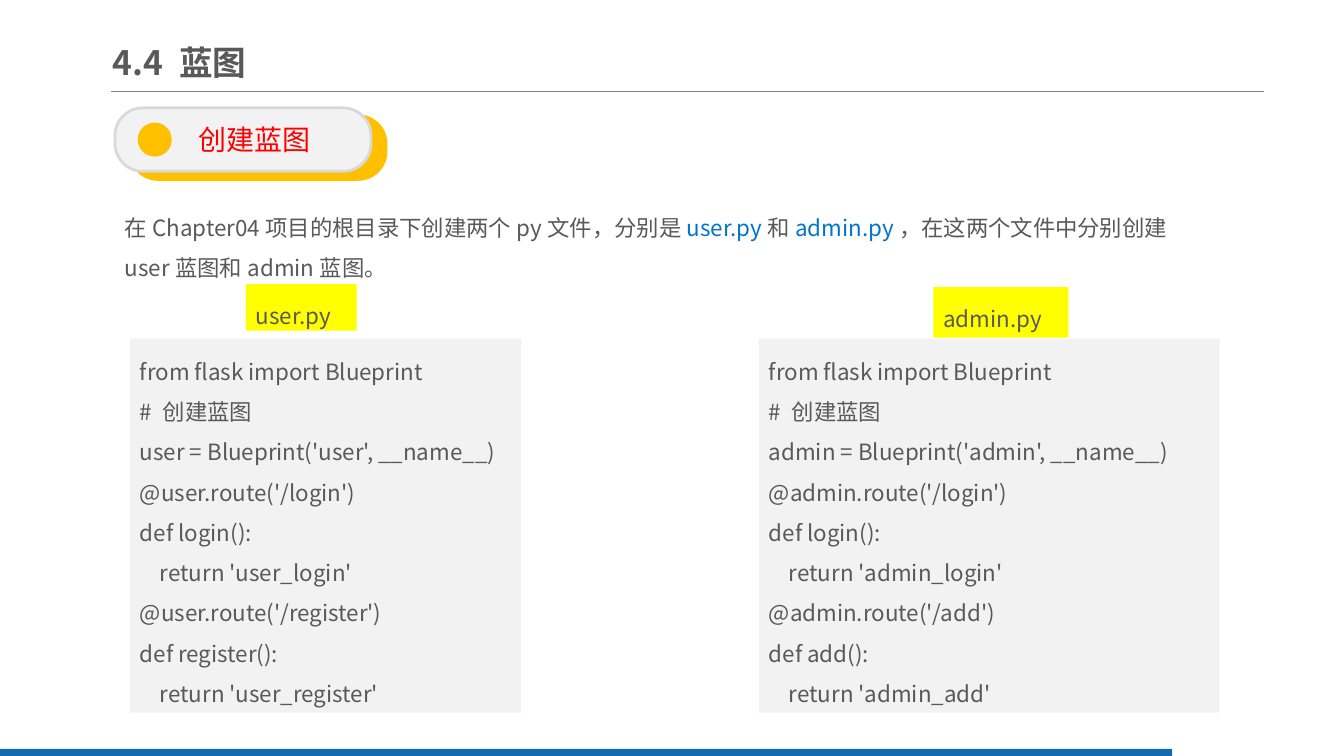
from pptx import Presentation
from pptx.dml.color import RGBColor
from pptx.enum.shapes import MSO_CONNECTOR, MSO_SHAPE as Shape
from pptx.enum.text import MSO_ANCHOR as Anchor, PP_ALIGN as Align
from pptx.oxml.ns import qn
from pptx.util import Inches, Pt
from lxml.etree import SubElement

COLORS = {
    "text": "595959", "red": "FF0000", "link": "0075CC", "rule": "808080",
    "bar": "1369B2", "amber": "FFC000", "pale": "F2F2F2", "edge": "D9D9D9",
    "yellow": "FFFF00",
}


class SlideBuilder:
    """Places elements on a grid of 160 columns by 90 rows."""

    font = "Noto Sans CJK SC"
    columns, rows = 160, 90

    def __init__(self, deck):
        self.column = deck.slide_width / self.columns
        self.row = deck.slide_height / self.rows
        self.page = deck.slides.add_slide(deck.slide_layouts[6])

    def place(self, left, top, width, height):
        return (round(left * self.column), round(top * self.row),
                round(width * self.column), round(height * self.row))

    def color(self, name):
        return RGBColor.from_string(COLORS[name])

    def shape(self, kind, area, fill, edge=None, rounding=None):
        box = self.page.shapes.add_shape(kind, *self.place(*area))
        box.shadow.inherit = False
        box.fill.solid()
        box.fill.fore_color.rgb = self.color(fill)
        if edge:
            box.line.color.rgb = self.color(edge)
            box.line.width = Pt(2)
        else:
            box.line.fill.background()
        if rounding is not None:
            box.adjustments[0] = rounding
        return box

    def textbox(self, area):
        return self.page.shapes.add_textbox(*self.place(*area))

    def rule(self, left, right, row):
        x, y, width, _ = self.place(left, row, right - left, 0)
        line = self.page.shapes.add_connector(
            MSO_CONNECTOR.STRAIGHT, x, y, x + width, y)
        line.line.color.rgb = self.color("rule")
        line.line.width = Pt(0.75)
        SubElement(line._element.spPr, qn("a:effectLst"))

    def style(self, span, size, color, bold=False):
        span.font.size = Pt(size)
        span.font.bold = bold
        span.font.name = self.font
        span.font.color.rgb = self.color(color)
        SubElement(span._r.get_or_add_rPr(), qn("a:ea"), typeface=self.font)

    def set_text(self, box, text, size=16, color="text", bold=False,
                 anchor=Anchor.TOP, align=Align.LEFT, spacing=None):
        frame = box.text_frame
        frame.word_wrap = True
        frame.vertical_anchor = anchor
        frame.text = text
        for para in frame.paragraphs:
            para.alignment = align
            if spacing:
                para.line_spacing = spacing
            for span in para.runs:
                self.style(span, size, color, bold)
        return frame

    def add_span(self, para, text, color):
        span = para.add_run()
        span.text = text
        self.style(span, 16, color)


def blueprint_code(name, action):
    """Listing of one blueprint file with a login view and a second view."""
    views = [line for view in ("login", action) for line in (
        f"@{name}.route('/{view}')",
        f"def {view}():",
        f"    return '{name}_{view}'",
    )]
    return "\n".join(["from flask import Blueprint", "# 创建蓝图",
                      f"{name} = Blueprint('{name}', __name__)", *views])


def main():
    deck = Presentation()
    deck.slide_width, deck.slide_height = Inches(13.333), Inches(7.5)
    slide = SlideBuilder(deck)

    # Header rule and footer bar
    slide.rule(13.2, 150.48, 10.92)
    slide.shape(Shape.RECTANGLE, (0, 89.16, 139.56, 0.84), "bar")

    # Section pill with its offset backing and dot
    left, top, width, height = 13.68, 12.84, 30.48, 7.56
    slide.shape(Shape.ROUNDED_RECTANGLE, (left + 1.8, top + 0.96, width, height),
                "amber", "amber", 0.44)
    pill = slide.shape(Shape.ROUNDED_RECTANGLE, (left, top, width, height),
                       "pale", "edge", 0.44)
    frame = slide.set_text(pill, "创建蓝图", 20, "red",
                           anchor=Anchor.MIDDLE, align=Align.CENTER)
    frame.margin_left = Inches(0.33)
    slide.shape(Shape.OVAL, (16.56, 14.76, 3.72, 3.72), "amber", "amber")

    # Introduction
    intro = slide.set_text(slide.textbox((13.68, 23.28, 131.52, 10.92)),
                           "在Chapter04项目的根目录下创建两个py文件，分别是",
                           spacing=1.5)
    for text, color in (
        ("user.py", "link"), ("和", "text"), ("admin.py", "link"),
        ("，在这两个文件中分别创建user蓝图和admin蓝图。", "text"),
    ):
        slide.add_span(intro.paragraphs[0], text, color)

    # Title
    title = slide.set_text(slide.textbox((13.44, 4.08, 51.12, 6.6)),
                           "4.4 蓝图", 24, bold=True, anchor=Anchor.MIDDLE)
    title.margin_left = title.margin_right = 0
    title.margin_top = title.margin_bottom = Inches(0.07)

    # Code panels with their file labels
    for name, action, code_left, code_width, label_area in (
        ("user", "register", 15.48, 46.56, (29.28, 33.84, 13.2, 5.52)),
        ("admin", "add", 90.36, 54.84, (111.12, 34.2, 16.08, 6)),
    ):
        panel = slide.shape(Shape.RECTANGLE,
                            (code_left, 40.32, code_width, 44.52), "pale")
        slide.set_text(panel, blueprint_code(name, action),
                       anchor=Anchor.MIDDLE, spacing=1.5)
        label = slide.shape(Shape.RECTANGLE, label_area, "yellow")
        slide.set_text(label, f"{name}.py", spacing=1.5)

    deck.save("out.pptx")


if __name__ == "__main__":
    main()
